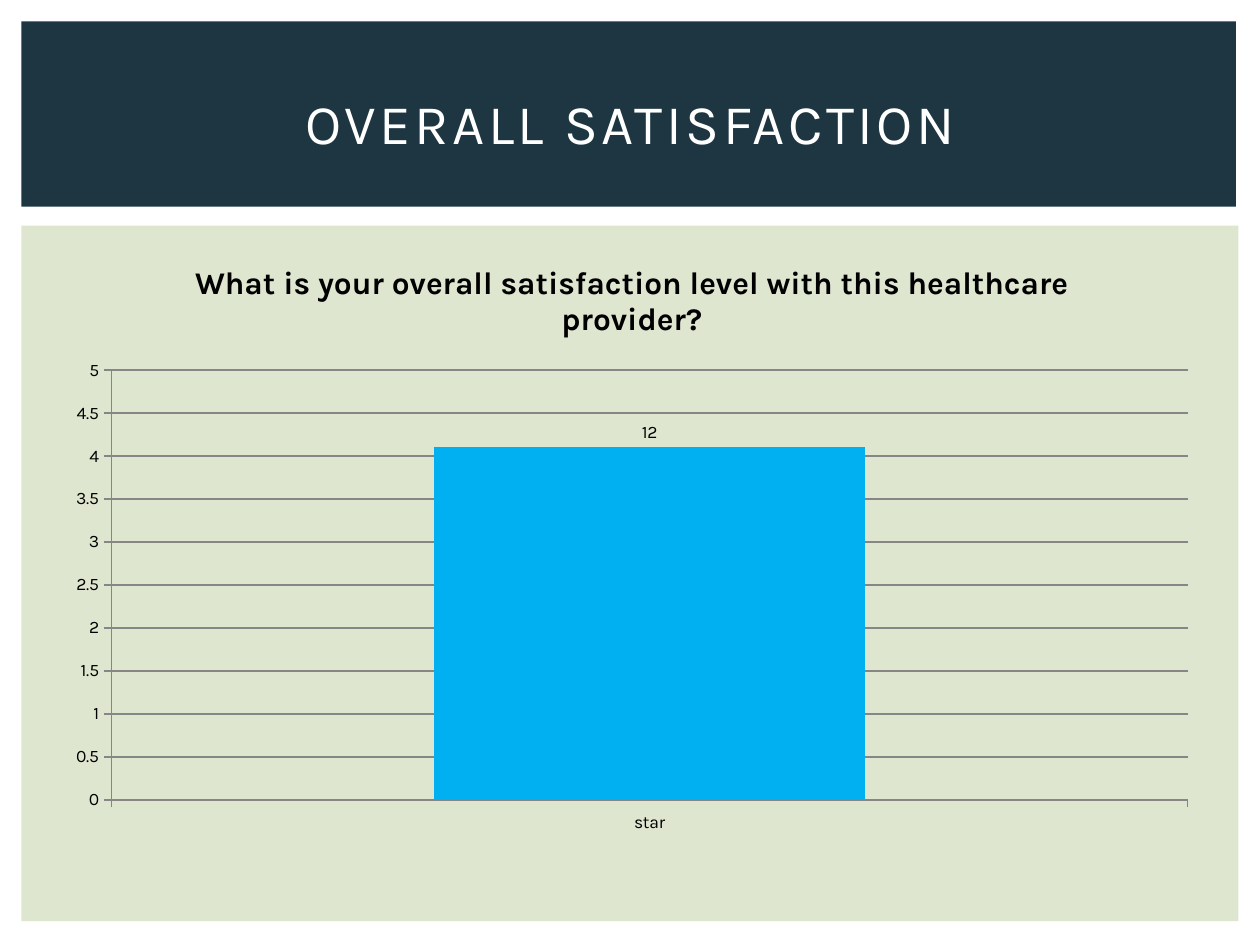
from dataclasses import dataclass
from typing import Any

from pptx import Presentation
from pptx.chart.data import CategoryChartData
from pptx.dml.color import RGBColor
from pptx.enum.chart import XL_CHART_TYPE, XL_LABEL_POSITION, XL_TICK_MARK
from pptx.enum.shapes import MSO_SHAPE
from pptx.enum.text import MSO_ANCHOR, PP_ALIGN
from pptx.util import Inches, Pt

FONT = "Karla"


@dataclass
class Panel:
    left: float
    top: float
    width: float
    height: float
    color: str


PANELS = [
    Panel(0.17, 1.79, 9.66, 5.52, "DFE6D0"),
    Panel(0.17, 0.17, 9.64, 1.47, "1D3641"),
]


def rgb(value: str) -> RGBColor:
    return RGBColor.from_string(value)


def set_attributes(target: Any, values: dict[str, Any]) -> None:
    for name, value in values.items():
        setattr(target, name, value)


def format_font(font: Any, size: float, color: str, bold: bool = False) -> None:
    set_attributes(font, {"name": FONT, "size": Pt(size), "bold": bold})
    font.color.rgb = rgb(color)


def draw_panel(slide: Any, panel: Panel) -> None:
    box = [Inches(v) for v in (panel.left, panel.top, panel.width, panel.height)]
    shape = slide.shapes.add_shape(MSO_SHAPE.RECTANGLE, *box)
    shape.shadow.inherit = False
    shape.fill.solid()
    shape.fill.fore_color.rgb = rgb(panel.color)
    shape.line.fill.background()


def draw_title(slide: Any, text: str) -> None:
    title = slide.shapes.title
    slide.shapes._spTree.append(title._element)
    set_attributes(title, {
        "left": Inches(0.42), "top": Inches(0.39),
        "width": Inches(9.17), "height": Inches(1.15),
    })
    frame = title.text_frame
    set_attributes(frame, {"word_wrap": True, "vertical_anchor": MSO_ANCHOR.MIDDLE})
    paragraph = frame.paragraphs[0]
    paragraph.alignment = PP_ALIGN.CENTER
    run = paragraph.add_run()
    run.text = text
    format_font(run.font, 32, "FFFFFF")
    run._r.get_or_add_rPr().set("spc", "200")


def format_axis_line(line: Any) -> None:
    line.color.rgb = rgb("868686")
    line.width = Pt(0.75)


def draw_satisfaction_chart(slide: Any) -> None:
    data = CategoryChartData()
    data.categories = ["star"]
    data.add_series("Series 1", [4.1])
    chart = slide.shapes.add_chart(
        XL_CHART_TYPE.COLUMN_CLUSTERED,
        Inches(0.42), Inches(1.88), Inches(9.19), Inches(4.82), data,
    ).chart
    set_attributes(chart, {"has_legend": False, "has_title": True})
    format_font(chart.font, 10, "000000")

    paragraph = chart.chart_title.text_frame.paragraphs[0]
    run = paragraph.add_run()
    run.text = "What is your overall satisfaction level with this healthcare provider?"
    format_font(run.font, 18, "000000", bold=True)
    chart.chart_title.include_in_layout = False

    for axis in (chart.category_axis, chart.value_axis):
        set_attributes(axis, {
            "major_tick_mark": XL_TICK_MARK.OUTSIDE,
            "minor_tick_mark": XL_TICK_MARK.NONE,
        })
        format_axis_line(axis.format.line)
        format_font(axis.tick_labels.font, 10, "000000")
    set_attributes(chart.value_axis, {
        "minimum_scale": 0, "maximum_scale": 5, "major_unit": 0.5,
        "has_major_gridlines": True,
    })
    format_axis_line(chart.value_axis.major_gridlines.format.line)

    plot = chart.plots[0]
    set_attributes(plot, {"gap_width": 150, "vary_by_categories": False})
    series = plot.series[0]
    series.format.fill.solid()
    series.format.fill.fore_color.rgb = rgb("00B0F0")
    label = series.points[0].data_label
    label.position = XL_LABEL_POSITION.OUTSIDE_END
    label_run = label.text_frame.paragraphs[0].add_run()
    label_run.text = "12"
    format_font(label_run.font, 10, "000000")


def main() -> None:
    presentation = Presentation()
    set_attributes(presentation, {"slide_width": Inches(10), "slide_height": Inches(7.5)})
    slide = presentation.slides.add_slide(presentation.slide_layouts[5])
    for panel in PANELS:
        draw_panel(slide, panel)
    draw_title(slide, "OVERALL SATISFACTION")
    draw_satisfaction_chart(slide)
    presentation.save("out.pptx")


if __name__ == "__main__":
    main()
